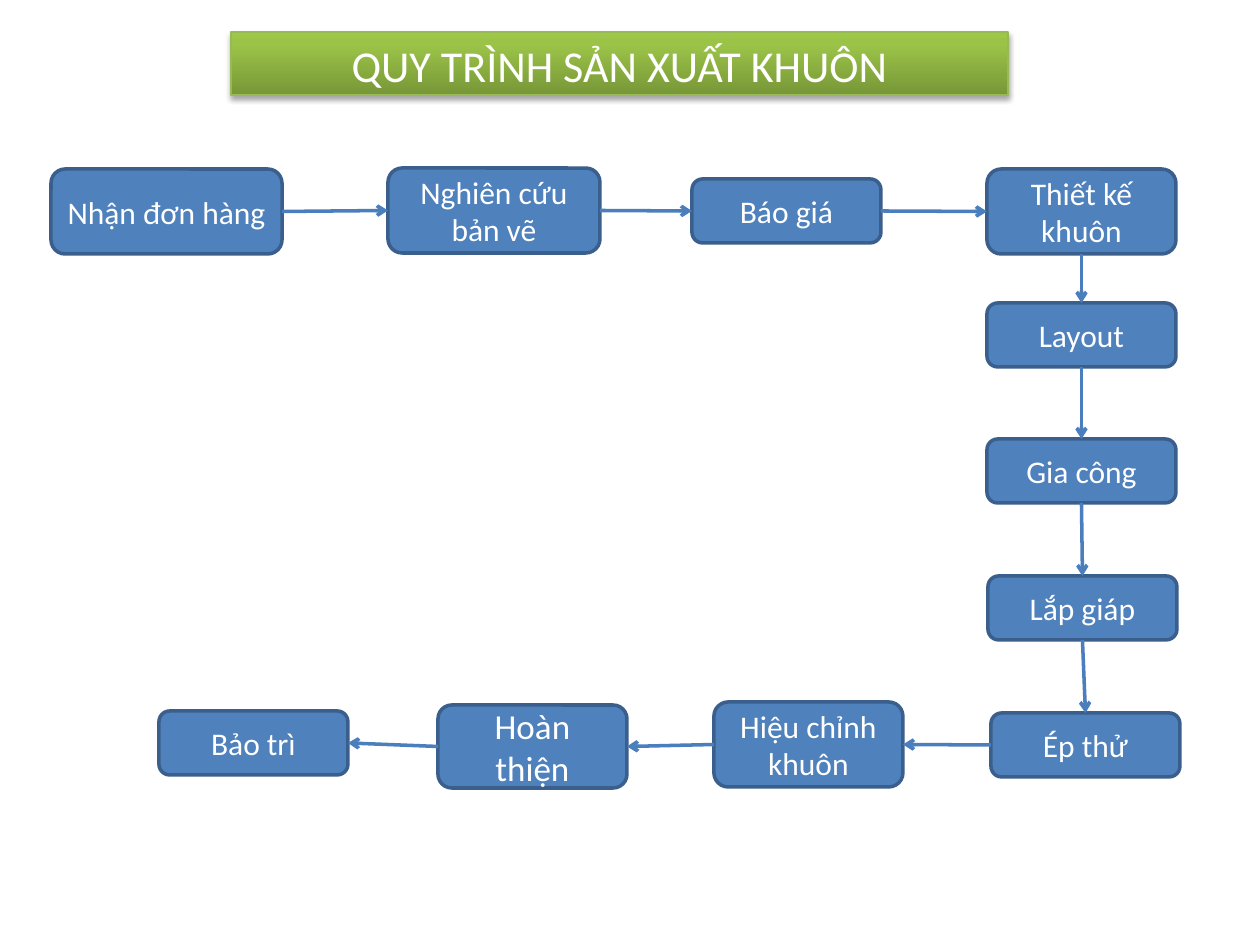
from itertools import pairwise

from pptx import Presentation
from pptx.dml.color import RGBColor
from pptx.enum.shapes import MSO_CONNECTOR, MSO_SHAPE
from pptx.enum.text import MSO_ANCHOR, PP_ALIGN
from pptx.oxml import parse_xml
from pptx.oxml.ns import nsdecls, qn
from pptx.oxml.xmlchemy import OxmlElement
from pptx.util import Emu, Pt

WHITE = RGBColor(0xFF, 0xFF, 0xFF)
STEP_FILL = RGBColor(0x4F, 0x81, 0xBD)
STEP_BORDER = RGBColor(0x3A, 0x5F, 0x8C)
ARROW = RGBColor(0x4B, 0x7E, 0xBC)
TITLE_BORDER = RGBColor(0x98, 0xB9, 0x55)
TITLE_STOPS = (
    (0, RGBColor(0x77, 0x97, 0x37)),
    (80, RGBColor(0x9B, 0xC3, 0x48)),
    (100, RGBColor(0x9D, 0xC7, 0x46)),
)
FONT = "Calibri"
TOP, LEFT, BOTTOM, RIGHT = range(4)
SHORT, TALL = 64, 85

# Text, left, top, width, height, font size, side where the arrow leaves
STEPS = (
    ("Nhận đơn hàng", 0, 1, 231, TALL, 18, RIGHT),
    ("Nghiên cứu bản vẽ", 337, 0, 212, TALL, 18, RIGHT),
    ("Báo giá", 641, 11, 189, SHORT, 18, RIGHT),
    ("Thiết kế khuôn", 936, 1, 189, TALL, 18, BOTTOM),
    ("Layout", 936, 135, 189, SHORT, 18, BOTTOM),
    ("Gia công", 936, 271, 189, SHORT, 18, BOTTOM),
    ("Lắp giáp", 937, 408, 189, SHORT, 18, BOTTOM),
    ("Ép thử", 940, 545, 189, SHORT, 18, LEFT),
    ("Hiệu chỉnh khuôn", 663, 534, 189, TALL, 18, LEFT),
    ("Hoàn thiện", 387, 537, 189, 83, 20, LEFT),
    ("Bảo trì", 108, 543, 189, SHORT, 18, None),
)
OPPOSITE = {RIGHT: LEFT, LEFT: RIGHT, BOTTOM: TOP}


def px(value):
    return Emu(round(value * 914400 / 126))


def add_box(slide, kind, box, text, size, border, border_width):
    """Add a shape with centred white text and no shadow."""
    shape = slide.shapes.add_shape(kind, *map(px, box))
    shape.shadow.inherit = False
    shape.line.color.rgb = border
    shape.line.width = Pt(border_width)
    text_frame = shape.text_frame
    text_frame.text = text
    text_frame.word_wrap = True
    text_frame.vertical_anchor = MSO_ANCHOR.MIDDLE
    paragraph = text_frame.paragraphs[0]
    paragraph.alignment = PP_ALIGN.CENTER
    font = paragraph.runs[0].font
    font.name = FONT
    font.size = Pt(size)
    font.color.rgb = WHITE
    return shape


def add_title(slide, box):
    shape = add_box(slide, MSO_SHAPE.RECTANGLE, box,
                    "QUY TRÌNH SẢN XUẤT KHUÔN", 25.2, TITLE_BORDER, 0.75)
    shape.text_frame.vertical_anchor = MSO_ANCHOR.TOP
    stops = "".join(
        f'<a:gs pos="{position * 1000}"><a:srgbClr val="{color}"/></a:gs>'
        for position, color in TITLE_STOPS
    )
    properties = shape.element.spPr
    properties.find(qn("a:prstGeom")).addnext(parse_xml(
        f'<a:gradFill {nsdecls("a")} rotWithShape="1"><a:gsLst>{stops}</a:gsLst>'
        '<a:lin ang="16200000" scaled="0"/></a:gradFill>'
    ))
    properties.find(qn("a:effectLst")).append(parse_xml(
        f'<a:outerShdw {nsdecls("a")} blurRad="{Pt(3.1)}" dist="{Pt(1.8)}" '
        'dir="5400000" rotWithShape="0"><a:srgbClr val="000000">'
        '<a:alpha val="35000"/></a:srgbClr></a:outerShdw>'
    ))


def add_arrow(slide, source, target, side):
    """Join two steps, leaving the source at the given side."""
    connector = slide.shapes.add_connector(MSO_CONNECTOR.STRAIGHT, 0, 0, 0, 0)
    connector.begin_connect(source, side)
    connector.end_connect(target, OPPOSITE[side])
    connector.line.color.rgb = ARROW
    connector.line.width = Pt(2)
    properties = connector.element.spPr
    arrowhead = OxmlElement("a:tailEnd")
    arrowhead.set("type", "arrow")
    properties.find(qn("a:ln")).append(arrowhead)
    properties.append(OxmlElement("a:effectLst"))


def add_process(slide, left, top):
    shapes = []
    for text, x, y, width, height, size, _ in STEPS:
        shape = add_box(slide, MSO_SHAPE.ROUNDED_RECTANGLE,
                        (left + x, top + y, width, height),
                        text, size, STEP_BORDER, 2)
        shape.fill.solid()
        shape.fill.fore_color.rgb = STEP_FILL
        shapes.append(shape)
    for (source, target), step in zip(pairwise(shapes), STEPS):
        add_arrow(slide, source, target, step[-1])


def main():
    presentation = Presentation()
    presentation.slide_width = px(1260)
    presentation.slide_height = px(945)
    slide = presentation.slides.add_slide(presentation.slide_layouts[6])
    add_title(slide, (231, 32, 777, 63))
    add_process(slide, 51, 168)
    presentation.save("out.pptx")


if __name__ == "__main__":
    main()
